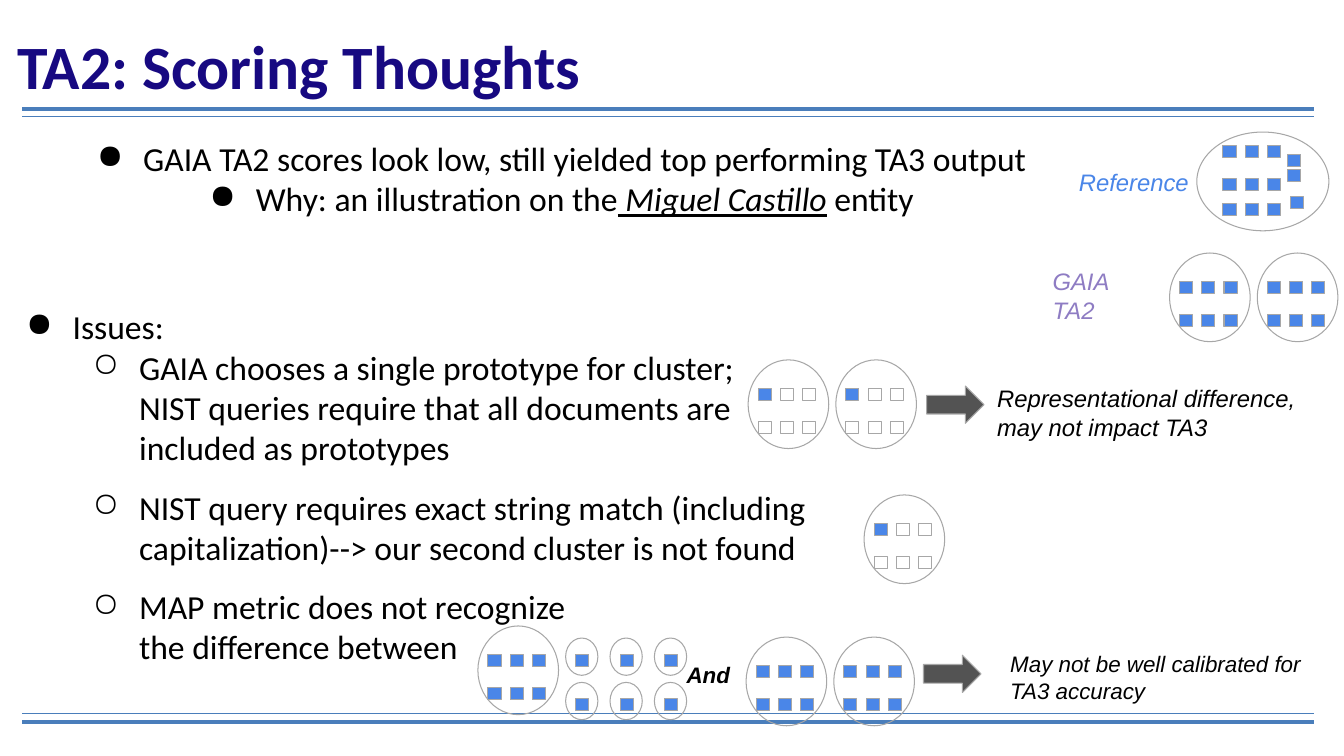
from lxml.etree import SubElement as Sub
from pptx import Presentation
from pptx.dml.color import RGBColor as Rgb
from pptx.enum.shapes import MSO_CONNECTOR as Link, MSO_SHAPE as Kind
from pptx.enum.text import MSO_ANCHOR as Anchor, MSO_AUTO_SIZE as Fit, PP_ALIGN as Align
from pptx.oxml.ns import qn
from pptx.util import Inches, Pt

INK = {"title": "170981", "text": "000000", "rule": "4A7EBB", "cell": "4A86E8",
       "edge": "A7A7A7", "arrow": "535353", "gaia": "8E7CC3"}
CELL = (0.13, 0.12)
STEP = (0.22, 0.33)
PAIR = 0.87


class Board:
    def __init__(self, deck):
        self.slide = deck.slides.add_slide(deck.slide_layouts[5])
        self.shapes = self.slide.shapes

    def font(self, font, name, size, ink, bold=False, italic=False):
        font.name, font.size = name, Pt(size)
        font.bold, font.italic = bold, italic
        font.color.rgb = Rgb.from_string(INK[ink])

    def frame(self, box, inset):
        frame = box.text_frame
        frame.word_wrap = True
        frame.margin_left = frame.margin_right = Inches(inset)
        frame.margin_top = frame.margin_bottom = Inches(inset)
        return frame

    def title(self, text, x, y, w, h):
        box = self.shapes.title
        box.left, box.top, box.width, box.height = map(Inches, (x, y, w, h))
        frame = self.frame(box, 0.05)
        frame.auto_size, frame.vertical_anchor = Fit.NONE, Anchor.MIDDLE
        frame.text = text
        para = frame.paragraphs[0]
        para.alignment = Align.LEFT
        self.font(para.runs[0].font, "Calibri", 44, "title", bold=True)

    def rule(self, y, width):
        line = self.shapes.add_connector(
            Link.STRAIGHT, Inches(0.22), Inches(y), Inches(13.03), Inches(y))
        line.line.color.rgb = Rgb.from_string(INK["rule"])
        line.line.width = Pt(width)
        Sub(line._element.spPr, qn("a:effectLst"))

    def label(self, text, x, y, w, h, size=17, ink="text", bold=False):
        box = self.shapes.add_textbox(*map(Inches, (x, y, w, h)))
        frame = self.frame(box, 0.13)
        frame.auto_size = Fit.SHAPE_TO_FIT_TEXT
        frame.text = text
        self.font(frame.paragraphs[0].runs[0].font, "Arial", size, ink, bold, True)

    def bullets(self, items, x, y, w, h, align=Align.LEFT):
        """Each item: bullet sign, level, left margin, space before, text parts."""
        box = self.shapes.add_textbox(*map(Inches, (x, y, w, h)))
        frame = self.frame(box, 0.05)
        for i, (sign, level, left, gap, parts) in enumerate(items):
            para = frame.add_paragraph() if i else frame.paragraphs[0]
            para.text = parts[0]
            for part in parts[1:]:
                para.add_run().text = part
            para.alignment, para.level = align, level
            if gap:
                para.space_before = Pt(gap)
            props = para._p.get_or_add_pPr()
            props.set("marL", str(Inches(left)))
            props.set("indent", str(Inches(-0.46)))
            Sub(Sub(props, qn("a:buClr")), qn("a:srgbClr"), val=INK["text"])
            Sub(props, qn("a:buChar"), char=sign)
            for run in para.runs:
                self.font(run.font, "Calibri", 24, "text")
        return frame

    def shape(self, kind, x, y, w, h, fill=None, home=None):
        item = (home or self.shapes).add_shape(kind, *map(Inches, (x, y, w, h)))
        item.shadow.inherit = False
        if fill:
            item.fill.solid()
            item.fill.fore_color.rgb = Rgb.from_string(INK[fill])
        else:
            item.fill.background()
        item.line.color.rgb = Rgb.from_string(INK["edge"])
        item.line.width = Pt(0.75)

    def group(self):
        return self.shapes.add_group_shape().shapes

    def cell(self, home, x, y, fill="cell"):
        self.shape(Kind.RECTANGLE, x, y, *CELL, fill, home)

    def ring(self, home, x, y, w, h):
        self.shape(Kind.OVAL, x, y, w, h, home=home)

    def cluster(self, home, x, y, full=True):
        self.ring(home, x, y, 0.8, 0.88)
        for row in range(2):
            for col in range(3):
                fill = "cell" if full or row == col == 0 else None
                self.cell(home, x + 0.1 + col * STEP[0], y + 0.28 + row * STEP[1], fill)

    def pair(self, x, y, full=True):
        home = self.group()
        for i in range(2):
            self.cluster(home, x + i * PAIR, y, full)

    def arrow(self, x, y):
        self.shape(Kind.RIGHT_ARROW, x, y, 0.57, 0.37, "arrow")


def main():
    deck = Presentation()
    deck.slide_width, deck.slide_height = Inches(13.33), Inches(7.5)
    board = Board(deck)

    # Rules and title
    for y, width in ((1.08, 3), (1.16, 0.75), (7.16, 3), (7.08, 0.75)):
        board.rule(y, width)
    board.title("TA2: Scoring Thoughts", 0.12, 0.23, 8.97, 0.83)

    # Opening points
    intro = board.bullets([
        ("●", 0, 0.67, 0, ["GAIA TA2 scores look low, still yielded top performing TA3 output"]),
        ("●", 0, 0.67, 0, ["Why: an illustration on the", " Miguel Castillo", " entity"]),
    ], 0, 1.32, 10.93, 1.08, Align.CENTER)
    name = intro.paragraphs[1].runs[1].font
    name.italic = name.underline = True

    # Issues
    board.bullets([
        ("●", 0, 0.67, 0, ["Issues:"]),
        ("○", 1, 1.33, 0, ["GAIA chooses a single prototype for cluster;\v"
                           "NIST queries require that all documents are\v"
                           "included as prototypes"]),
        ("○", 1, 1.33, 13.5, ["NIST query requires exact string match (including "
                              "capitalization)--> our second cluster is not found"]),
        ("○", 1, 1.33, 13.5, ["MAP metric does not recognize\vthe difference between"]),
    ], 0, 2.99, 8.33, 3.56)

    # Reference cluster
    home = board.group()
    board.ring(home, 11.87, 1.31, 1.31, 0.98)
    for y in (1.44, 1.77, 2.02):
        for col in range(3):
            board.cell(home, 12.13 + col * STEP[0], y)
    for x, y in ((12.77, 1.53), (12.77, 1.68), (12.8, 1.95)):
        board.cell(home, x, y)
    board.label("Reference", 10.57, 1.53, 1.53, 0.56, ink="cell")

    # System clusters
    board.pair(11.6, 2.51)
    board.label("GAIA TA2", 10.31, 2.52, 1.26, 0.84, ink="gaia")

    # Single prototype
    board.pair(7.42, 3.57, full=False)
    board.arrow(9.19, 3.83)
    board.label("Representational difference, may not impact TA3", 9.76, 3.68, 3.67, 0.84)

    # Exact match
    board.cluster(board.group(), 8.57, 4.91, full=False)

    # One cluster with singles, against two clusters
    home = board.group()
    board.cluster(home, 4.74, 6.21)
    for col in range(3):
        for row in range(2):
            x, y = 5.61 + col * 0.44, 6.33 + row * 0.44
            board.ring(home, x, y, 0.32, 0.37)
            board.cell(home, x + 0.1, y + 0.16)
    board.label("And", 6.68, 6.43, 0.8, 0.54, size=16, bold=True)
    board.pair(7.4, 6.32)
    board.arrow(9.16, 6.5)
    board.label("May not be well calibrated for TA3 accuracy", 9.89, 6.32, 3.3, 0.81, size=16)

    deck.save("out.pptx")


if __name__ == "__main__":
    main()
